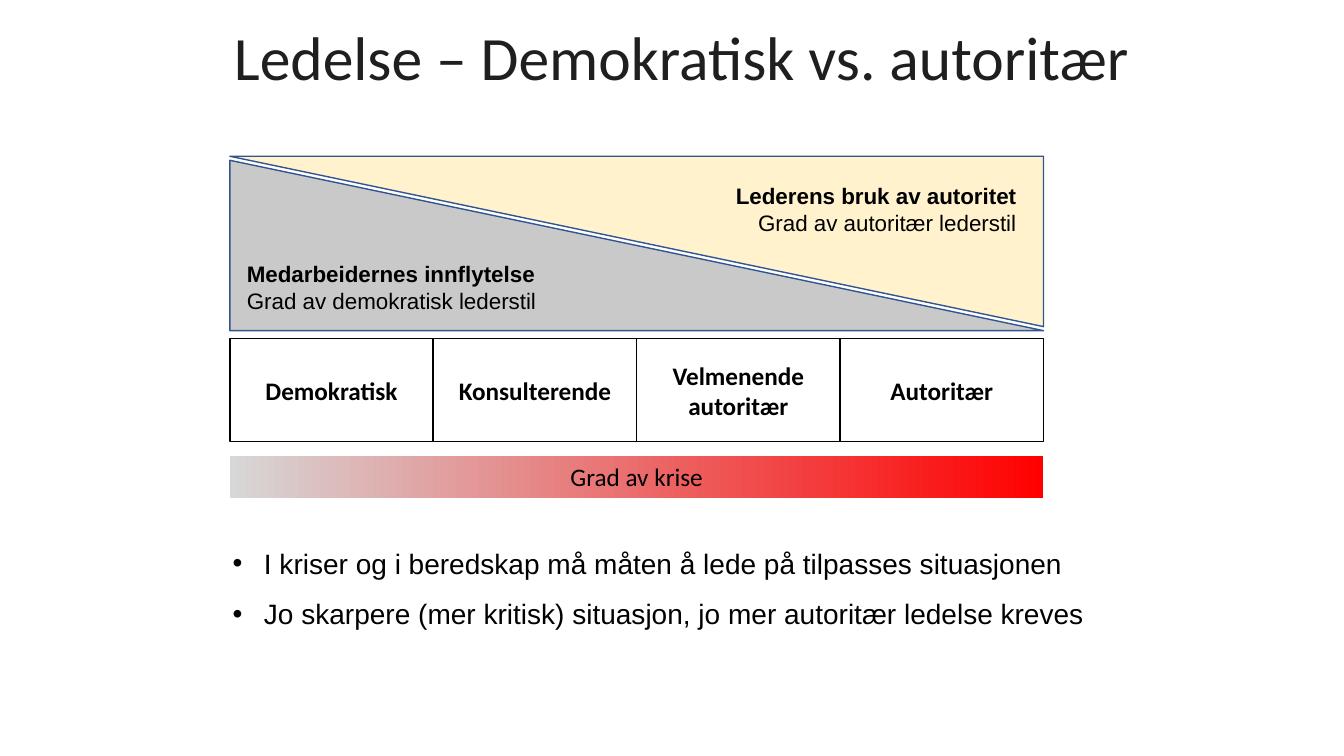
from lxml.etree import SubElement
from pptx import Presentation
from pptx.dml.color import RGBColor
from pptx.enum.shapes import MSO_SHAPE
from pptx.enum.text import MSO_ANCHOR, MSO_AUTO_SIZE, PP_ALIGN
from pptx.oxml.ns import qn
from pptx.util import Inches, Pt


def color(value):
    return RGBColor.from_string(value)


def write(shape, lines, size, font, align, ink="000000", bold_lines=0):
    frame = shape.text_frame
    frame.word_wrap = True
    frame.text = "\n".join(lines)
    for index, paragraph in enumerate(frame.paragraphs):
        paragraph.alignment = align
        for run in paragraph.runs:
            run.font.size = Pt(size)
            run.font.name = font
            run.font.bold = index < bold_lines
            run.font.color.rgb = color(ink)
    return frame


LEFT, WIDTH = 2.28, 8.07
RIGHT = LEFT + WIDTH
STYLES = ["Demokratisk", "Konsulterende", "Velmenende autoritær", "Autoritær"]
COLUMN = WIDTH / len(STYLES)

presentation = Presentation()
presentation.slide_width = Inches(13.33)
presentation.slide_height = Inches(7.5)
slide = presentation.slides.add_slide(presentation.slide_layouts[5])
shapes = slide.shapes

heading = shapes.title
heading.left, heading.top = Inches(2.22), Inches(0.33)
heading.width, heading.height = Inches(9.45), Inches(0.55)
heading_frame = write(heading, ["Ledelse – Demokratisk vs. autoritær"], 44, "Calibri",
                      PP_ALIGN.LEFT, "211E1E")
heading_frame.auto_size = MSO_AUTO_SIZE.NONE
heading_frame.vertical_anchor = MSO_ANCHOR.MIDDLE
heading_frame.paragraphs[0].line_spacing = 0.9

for column, style in enumerate(STYLES):
    style_box = shapes.add_shape(MSO_SHAPE.RECTANGLE, Inches(LEFT + column * COLUMN),
                                 Inches(3.36), Inches(COLUMN), Inches(1.02))
    style_box.shadow.inherit = False
    style_box.fill.solid()
    style_box.fill.fore_color.rgb = color("FFFFFF")
    style_box.line.color.rgb = color("000000")
    style_box.line.width = Pt(1)
    write(style_box, [style], 18, "Calibri", PP_ALIGN.CENTER, bold_lines=1)

wedges = [
    ([(LEFT, 3.28), (RIGHT, 3.28), (LEFT, 1.59)], "C9C9C9"),
    ([(RIGHT, 1.55), (LEFT, 1.55), (RIGHT, 3.24)], "FFF2CC"),
]
for corners, tint in wedges:
    points = [(Inches(x), Inches(y)) for x, y in corners]
    outline = shapes.build_freeform(*points[0])
    outline.add_line_segments(points[1:], close=True)
    wedge = outline.convert_to_shape()
    wedge.shadow.inherit = False
    wedge.fill.solid()
    wedge.fill.fore_color.rgb = color(tint)
    wedge.line.color.rgb = color("325491")
    wedge.line.width = Pt(1)

captions = [
    (2.35, 2.53, PP_ALIGN.LEFT, ["Medarbeidernes innflytelse", "Grad av demokratisk lederstil"]),
    (6.48, 1.76, PP_ALIGN.RIGHT, ["Lederens bruk av autoritet", "Grad av autoritær lederstil"]),
]
for x, y, align, lines in captions:
    caption = shapes.add_textbox(Inches(x), Inches(y), Inches(3.7), Inches(0.64))
    write(caption, lines, 16, "Arial", align, bold_lines=1)

advice = shapes.add_textbox(Inches(2.21), Inches(5.37), Inches(9.46), Inches(0.94))
advice_frame = write(advice, [
    "I kriser og i beredskap må måten å lede på tilpasses situasjonen",
    "Jo skarpere (mer kritisk) situasjon, jo mer autoritær ledelse kreves",
], 20, "Arial", PP_ALIGN.LEFT)
for paragraph in advice_frame.paragraphs:
    paragraph.space_after = Pt(12)
    properties = paragraph._p.get_or_add_pPr()
    properties.set("marL", str(Inches(0.31)))
    properties.set("indent", str(-Inches(0.31)))
    SubElement(properties, qn("a:buFont")).set("typeface", "Arial")
    SubElement(properties, qn("a:buChar")).set("char", "•")

crisis = shapes.add_shape(MSO_SHAPE.RECTANGLE, Inches(LEFT), Inches(4.52),
                          Inches(WIDTH), Inches(0.42))
crisis.shadow.inherit = False
crisis.fill.gradient()
crisis.fill.gradient_angle = 0
for stop, tint in zip(crisis.fill.gradient_stops, ["D7D7D7", "FF0000"]):
    stop.color.rgb = color(tint)
crisis.line.fill.background()
write(crisis, ["Grad av krise"], 18, "Calibri", PP_ALIGN.CENTER)

presentation.save("out.pptx")
